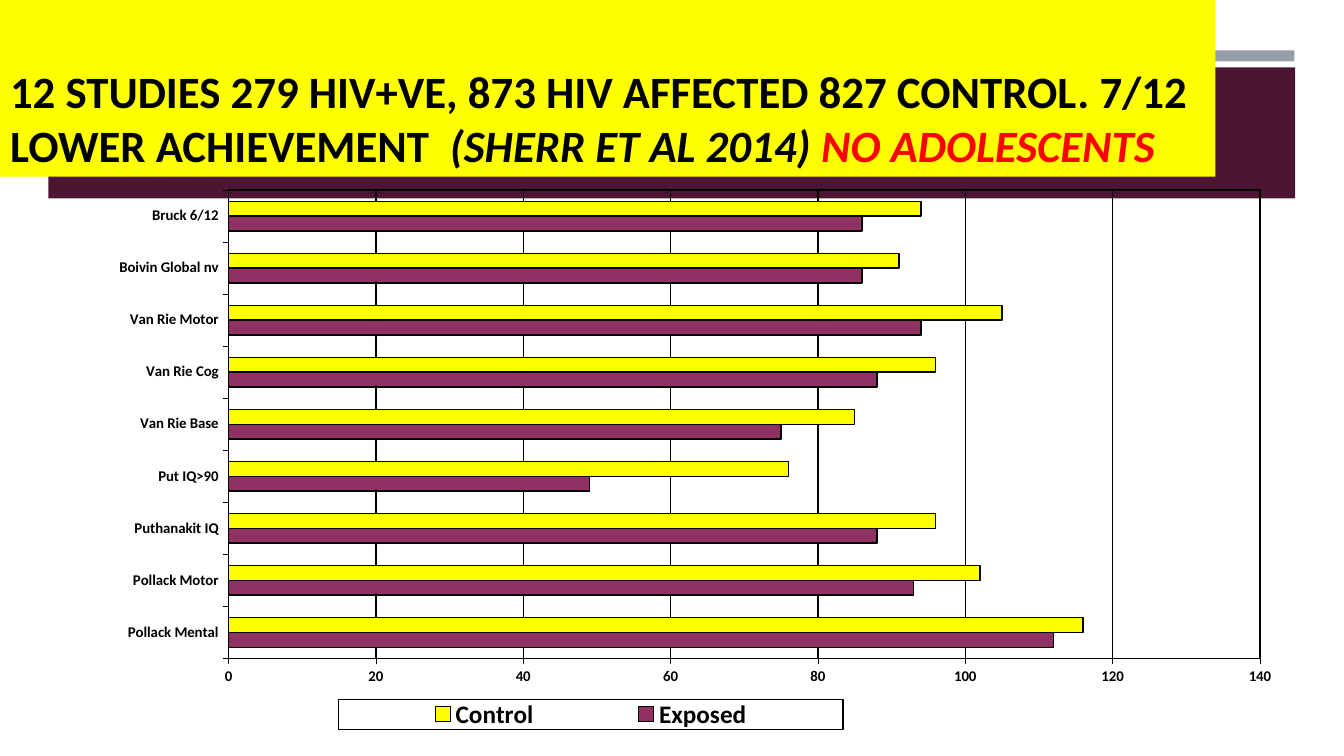
from dataclasses import dataclass

from lxml.etree import _Element as Element
from pptx import Presentation
from pptx.chart.axis import _BaseAxis as Axis
from pptx.chart.data import CategoryChartData
from pptx.dml.color import RGBColor
from pptx.dml.fill import FillFormat
from pptx.dml.line import LineFormat
from pptx.enum.chart import XL_CHART_TYPE as ChartType
from pptx.enum.chart import XL_LEGEND_POSITION as LegendPosition
from pptx.enum.chart import XL_TICK_MARK as TickMark
from pptx.enum.shapes import MSO_SHAPE as Preset
from pptx.enum.text import MSO_ANCHOR as Anchor
from pptx.enum.text import MSO_AUTO_SIZE as AutoSize
from pptx.enum.text import PP_ALIGN as Align
from pptx.oxml import parse_xml
from pptx.oxml.ns import nsdecls, qn
from pptx.slide import Slide
from pptx.text.text import Font
from pptx.util import Cm, Pt

FONT = "Calibri"
BLACK, YELLOW, RED = "000000", "FFFF00", "FF0000"
GREY, PLUM, PURPLE = "969FA7", "4D1434", "903163"


@dataclass
class Band:
    left: float
    top: float
    width: float
    height: float
    color: str


@dataclass
class TitlePart:
    text: str
    color: str = BLACK
    italic: bool = False


@dataclass
class Group:
    name: str
    scores: list[int]
    color: str


BANDS = [
    Band(22.33, 1.27, 10.29, 0.28, GREY),
    Band(1.22, 1.7, 31.42, 3.3, PLUM),
]
TITLE_PARTS = [
    TitlePart("12 STUDIES 279 HIV+VE, 873 HIV AFFECTED 827 CONTROL. 7/12 LOWER ACHIEVEMENT  "),
    TitlePart("(SHERR ET AL 2014) ", italic=True),
    TitlePart("NO ADOLESCENTS", RED, True),
]
STUDIES = [
    "Pollack Mental", "Pollack Motor", "Puthanakit IQ", "Put IQ>90", "Van Rie Base",
    "Van Rie Cog", "Van Rie Motor", "Boivin Global nv", "Bruck 6/12",
]
GROUPS = [
    Group("Exposed", [112, 93, 88, 49, 75, 88, 94, 86, 86], PURPLE),
    Group("Control", [116, 102, 96, 76, 85, 96, 105, 91, 94], YELLOW),
]


def paint(fill: FillFormat, color: str) -> None:
    fill.solid()
    fill.fore_color.rgb = RGBColor.from_string(color)


def stroke(line: LineFormat, width: float) -> None:
    paint(line.fill, BLACK)
    line.width = Pt(width)


def style_font(font: Font, size: float, color: str = BLACK, italic: bool = False) -> None:
    font.name = FONT
    font.size = Pt(size)
    font.bold = True
    font.italic = italic
    font.color.rgb = RGBColor.from_string(color)


def add_band(page: Slide, band: Band) -> None:
    shape = page.shapes.add_shape(
        Preset.RECTANGLE, Cm(band.left), Cm(band.top), Cm(band.width), Cm(band.height))
    shape.shadow.inherit = False
    paint(shape.fill, band.color)
    shape.line.fill.background()


def write_title(page: Slide) -> None:
    title = page.shapes.title
    title.left, title.top, title.width, title.height = Cm(0), Cm(0), Cm(30.63), Cm(4.45)
    paint(title.fill, YELLOW)
    frame = title.text_frame
    frame.word_wrap = True
    frame.auto_size = AutoSize.NONE
    frame.vertical_anchor = Anchor.BOTTOM
    para = frame.paragraphs[0]
    para.alignment = Align.LEFT
    for part in TITLE_PARTS:
        span = para.add_run()
        span.text = part.text
        style_font(span.font, 32, part.color, part.italic)
    # Bring the title in front of the bands
    title.element.getparent().append(title.element)


def make_layout(x: float, y: float, width: float, height: float, inner: bool = False) -> Element:
    target = '<c:layoutTarget val="inner"/>' if inner else ""
    return parse_xml(
        f'<c:layout {nsdecls("c")}><c:manualLayout>{target}'
        '<c:xMode val="edge"/><c:yMode val="edge"/>'
        f'<c:x val="{x}"/><c:y val="{y}"/><c:w val="{width}"/><c:h val="{height}"/>'
        '</c:manualLayout></c:layout>')


def make_outline() -> Element:
    return parse_xml(
        f'<c:spPr {nsdecls("c", "a")}><a:noFill/><a:ln w="12700"><a:solidFill>'
        f'<a:srgbClr val="{BLACK}"/></a:solidFill></a:ln></c:spPr>')


def drop_layout(parent: Element) -> None:
    for layout in parent.findall(qn("c:layout")):
        parent.remove(layout)


def style_axis(axis: Axis) -> None:
    axis.major_tick_mark = TickMark.OUTSIDE
    axis.minor_tick_mark = TickMark.NONE
    stroke(axis.format.line, 0.25)
    style_font(axis.tick_labels.font, 10.6)


def add_score_chart(page: Slide) -> None:
    data = CategoryChartData()
    data.categories = STUDIES
    for group in GROUPS:
        data.add_series(group.name, group.scores)
    chart = page.shapes.add_chart(
        ChartType.BAR_CLUSTERED, Cm(1.04), Cm(4.45), Cm(31.47), Cm(14.22), data).chart
    style_font(chart.font, 10.6)
    chart.has_title = False

    # Bars
    plot = chart.plots[0]
    plot.gap_width = 150
    plot.overlap = 0
    plot.vary_by_categories = False
    for series, group in zip(plot.series, GROUPS):
        paint(series.format.fill, group.color)
        stroke(series.format.line, 1.06)

    # Axes
    style_axis(chart.category_axis)
    scale = chart.value_axis
    style_axis(scale)
    scale.minimum_scale, scale.maximum_scale, scale.major_unit = 0, 140, 20
    scale.has_major_gridlines = True
    stroke(scale.major_gridlines.format.line, 1.06)

    # Legend
    chart.has_legend = True
    chart.legend.position = LegendPosition.BOTTOM
    chart.legend.include_in_layout = False
    style_font(chart.legend.font, 18)

    # Frames and fixed places of plot area and legend
    root = chart.element.find(qn("c:chart"))
    area, legend = root.find(qn("c:plotArea")), root.find(qn("c:legend"))
    drop_layout(area)
    area.insert(0, make_layout(0.15, 0.024, 0.826, 0.83, inner=True))
    area.append(make_outline())
    drop_layout(legend)
    legend.find(qn("c:legendPos")).addnext(make_layout(0.238, 0.926, 0.404, 0.053))
    legend.find(qn("c:txPr")).addprevious(make_outline())


def main() -> None:
    deck = Presentation()
    deck.slide_width, deck.slide_height = Cm(33.87), Cm(19.05)
    page = deck.slides.add_slide(deck.slide_layouts[5])
    for band in BANDS:
        add_band(page, band)
    write_title(page)
    add_score_chart(page)
    deck.save("out.pptx")


if __name__ == "__main__":
    main()
